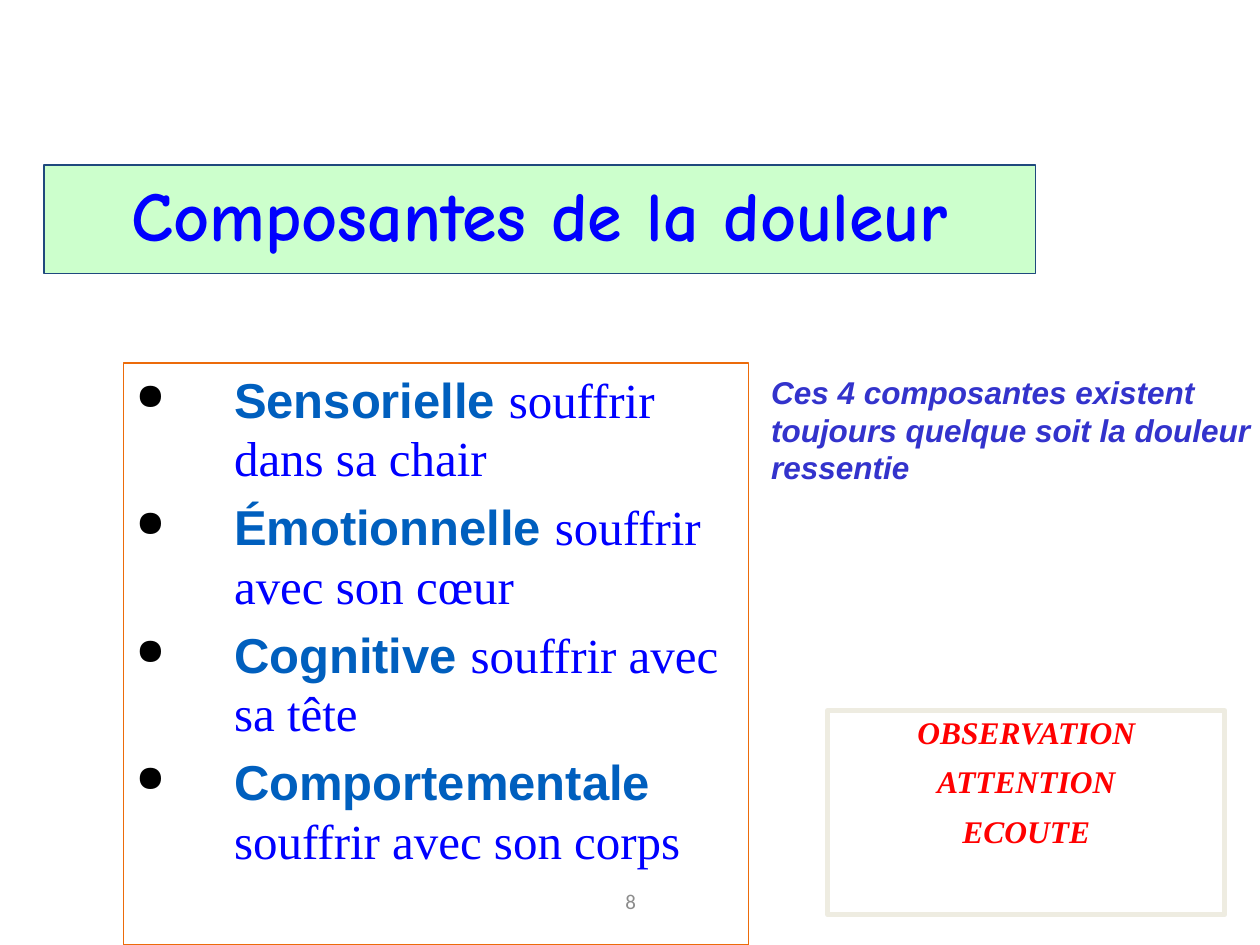
from lxml.etree import SubElement
from pptx import Presentation
from pptx.dml.color import RGBColor
from pptx.enum.shapes import MSO_SHAPE
from pptx.enum.text import MSO_ANCHOR, PP_ALIGN
from pptx.oxml.ns import qn
from pptx.util import Inches, Pt

TITLE = "Composantes de la douleur"
COMPONENTS = [
    ("Sensorielle ", "souffrir dans sa chair"),
    ("Émotionnelle ", "souffrir avec son cœur"),
    ("Cognitive ", "souffrir avec sa tête"),
    ("Comportementale ", "souffrir avec son corps"),
]
REMARK = "Ces 4 composantes existent toujours quelque soit la douleur ressentie"
ATTITUDES = ["OBSERVATION", "ATTENTION", "ECOUTE"]
PAGE_NUMBER = "8"

# Text styles: font, size, colour, bold, italic
THEME = {
    "title": ("Comic Neue", 40, "0000FF", True, False),
    "component": ("Arial", 28, "005FBE", True, False),
    "meaning": ("Times New Roman", 28, "0000FF", False, False),
    "remark": ("Arial", 18, "3333CC", True, True),
    "attitude": ("Times New Roman", 18, "FF0000", True, True),
    "page": ("Calibri", 12, "8C8C8C", False, False),
    "title_fill": "CCFFCC",
    "title_line": "1F497D",
    "components_line": "EC6B0A",
    "attitudes_line": "EEECE1",
    "bullet": "000000",
}
BULLET_INDENT = Inches(0.78)


def color(key):
    return RGBColor.from_string(THEME[key])


def add_bullet(paragraph):
    properties = paragraph._p.get_or_add_pPr()
    properties.set("marL", str(BULLET_INDENT))
    properties.set("indent", str(-BULLET_INDENT))
    bullet_color = SubElement(properties, qn("a:buClr"))
    SubElement(bullet_color, qn("a:srgbClr"), val=THEME["bullet"])
    SubElement(properties, qn("a:buSzPct"), val="75000")
    SubElement(properties, qn("a:buChar"), char="●")


def write(shape, paragraphs, *, align=PP_ALIGN.LEFT, anchor=MSO_ANCHOR.TOP,
          margins=(0.1, 0.05), line_spacing=1.0, before=0, bullets=False):
    """Fill a shape with paragraphs, each a list of (text, style) runs."""
    frame = shape.text_frame
    frame.word_wrap = True
    frame.vertical_anchor = anchor
    frame.margin_left = frame.margin_right = Inches(margins[0])
    frame.margin_top = frame.margin_bottom = Inches(margins[1])
    for index, runs in enumerate(paragraphs):
        paragraph = frame.add_paragraph() if index else frame.paragraphs[0]
        paragraph.alignment = align
        paragraph.line_spacing = line_spacing
        paragraph.space_before = Pt(before)
        if bullets:
            add_bullet(paragraph)
        for text, style in runs:
            run = paragraph.add_run()
            run.text = text
            font = run.font
            font.name, size, rgb, font.bold, font.italic = THEME[style]
            font.size = Pt(size)
            font.color.rgb = RGBColor.from_string(rgb)


def add_box(slide, bounds, line, width=0.75, fill=None):
    box = slide.shapes.add_shape(MSO_SHAPE.RECTANGLE, *map(Inches, bounds))
    box.shadow.inherit = False
    if fill:
        box.fill.solid()
        box.fill.fore_color.rgb = color(fill)
    else:
        box.fill.background()
    box.line.color.rgb = color(line)
    box.line.width = Pt(width)
    return box


def add_label(slide, bounds):
    return slide.shapes.add_textbox(*map(Inches, bounds))


def main():
    deck = Presentation()
    deck.slide_width, deck.slide_height = Inches(10), Inches(7.5)
    slide = deck.slides.add_slide(deck.slide_layouts[6])

    page = add_label(slide, (3.42, 6.95, 3.17, 0.4))
    write(page, [[(PAGE_NUMBER, "page")]],
          align=PP_ALIGN.CENTER, anchor=MSO_ANCHOR.MIDDLE)

    title = add_box(slide, (0.35, 1.31, 7.87, 0.86), "title_line", fill="title_fill")
    write(title, [[(TITLE, "title")]], align=PP_ALIGN.CENTER,
          anchor=MSO_ANCHOR.MIDDLE, line_spacing=0.9)

    components = add_box(slide, (0.98, 2.88, 4.96, 4.62), "components_line")
    write(components,
          [[(name, "component"), (meaning, "meaning")] for name, meaning in COMPONENTS],
          before=5.6, bullets=True)

    remark = add_label(slide, (6.12, 2.96, 3.88, 1.6))
    write(remark, [[(REMARK, "remark")]], margins=(0, 0))

    attitudes = add_box(slide, (6.57, 5.64, 3.15, 1.62), "attitudes_line", width=3)
    write(attitudes, [[(word, "attitude")] for word in ATTITUDES],
          align=PP_ALIGN.CENTER, line_spacing=0.9, before=9)

    deck.save("out.pptx")


if __name__ == "__main__":
    main()
